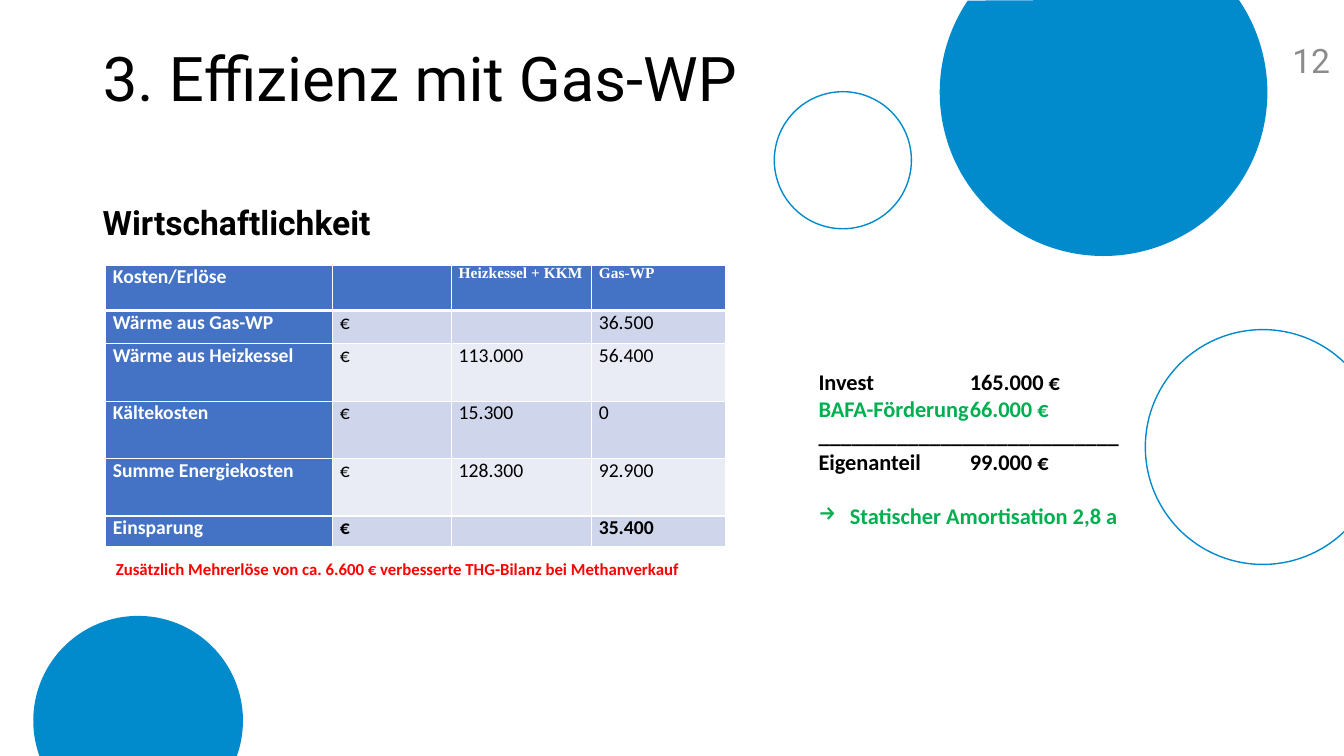
"""Build the slide on the economics of the gas heat pump."""
from dataclasses import dataclass

from lxml import etree
from pptx import Presentation
from pptx.dml.color import RGBColor
from pptx.enum.shapes import MSO_SHAPE
from pptx.enum.text import MSO_ANCHOR, PP_ALIGN
from pptx.oxml.ns import qn
from pptx.util import Inches, Pt

ELLIPSE = MSO_SHAPE.OVAL
CHORD = MSO_SHAPE.CHORD
TOP = MSO_ANCHOR.TOP
MIDDLE = MSO_ANCHOR.MIDDLE
LEFT = PP_ALIGN.LEFT
RIGHT = PP_ALIGN.RIGHT
TITLE_ONLY = 5


@dataclass(frozen=True)
class Theme:
    heading_font: str = "Roboto"
    body_font: str = "Calibri"
    column_font: str = "Times New Roman"
    circle: str = "018BCC"
    black: str = "000000"
    white: str = "FFFFFF"
    grey: str = "8C8C8C"
    red: str = "FF0000"
    green: str = "00B050"
    header: str = "4472C4"
    bands: tuple = ("CFD5EA", "E9EBF5")
    title_size: int = 44
    heading_size: int = 24
    result_size: int = 16
    cell_size: int = 14
    note_size: int = 12
    column_size: int = 11


THEME = Theme()

COLUMN_WIDTHS = (2.25, 1.18, 1.39, 1.33)
ROW_HEIGHTS = (0.45, 0.33, 0.57, 0.57, 0.57, 0.28)
COSTS = (
    ("Kosten/Erlöse", "", "Heizkessel + KKM", "Gas-WP"),
    ("Wärme aus Gas-WP", "€", "", "36.500"),
    ("Wärme aus Heizkessel", "€", "113.000", "56.400"),
    ("Kältekosten", "€", "15.300", "0"),
    ("Summe Energiekosten", "€", "128.300", "92.900"),
    ("Einsparung", "€", "", "35.400"),
)
RESULTS = (
    ("Invest\t\t165.000 €", THEME.black),
    ("BAFA-Förderung\t66.000 €", THEME.green),
    ("_" * 27, THEME.black),
    ("Eigenanteil\t99.000 €", THEME.black),
    ("Statischer Amortisation 2,8 a", THEME.green),
)
CIRCLES = (
    (0.33, 6.11, 2.08, True, (160.08, 19.82)),
    (7.68, 0.91, 1.36, False, None),
    (9.32, -0.71, 3.25, True, (325.38, 214.02)),
    (11.36, 3.27, 2.33, False, (45, 314.68)),
)


def style(run, font, size, color, bold=False):
    """Set the font, size, colour and weight of a run."""
    run.font.name = font
    run.font.size = Pt(size)
    run.font.bold = bold
    run.font.color.rgb = RGBColor.from_string(color)


def add_circle(slide, left, top, diameter, filled, angles):
    """Draw a circle, or a chord between two angles in degrees."""
    shape = slide.shapes.add_shape(
        CHORD if angles else ELLIPSE,
        Inches(left), Inches(top), Inches(diameter), Inches(diameter))
    shape.shadow.inherit = False
    for index, angle in enumerate(angles or ()):
        shape.adjustments[index] = angle * 0.6
    color = RGBColor.from_string(THEME.circle)
    if filled:
        shape.fill.solid()
        shape.fill.fore_color.rgb = color
        shape.line.fill.background()
    else:
        shape.fill.background()
        shape.line.color.rgb = color
        shape.line.width = Pt(1)


def add_title(slide, text):
    """Place and format the title placeholder."""
    title = slide.shapes.title
    title.left, title.top = Inches(0.92), Inches(0.4)
    title.width, title.height = Inches(11.5), Inches(1.45)
    frame = title.text_frame
    frame.text = text
    frame.vertical_anchor = TOP
    frame.margin_top = Inches(0.08)
    paragraph = frame.paragraphs[0]
    paragraph.alignment = LEFT
    paragraph.line_spacing = 0.9
    style(paragraph.runs[0], THEME.heading_font, THEME.title_size, THEME.black)


def add_text(slide, box, lines, font, size, bold=True, align=LEFT, anchor=TOP):
    """Add a text box of (text, colour) lines and return its paragraphs."""
    shape = slide.shapes.add_textbox(*(Inches(length) for length in box))
    frame = shape.text_frame
    frame.word_wrap = True
    frame.vertical_anchor = anchor
    frame.text = "\n".join(text for text, _ in lines)
    for paragraph, (_, color) in zip(frame.paragraphs, lines):
        paragraph.alignment = align
        style(paragraph.runs[0], font, size, color, bold)
    return frame.paragraphs


def add_bullet(paragraph, character, indent):
    """Give a paragraph a hanging bullet."""
    properties = paragraph._p.get_or_add_pPr()
    properties.set("marL", str(Inches(indent)))
    properties.set("indent", str(-Inches(indent)))
    etree.SubElement(properties, qn("a:buChar")).set("char", character)


def add_borders(cell, widths):
    """Draw white cell borders, given widths by side."""
    properties = cell._tc.get_or_add_tcPr()
    for side, width in widths.items():
        line = etree.SubElement(properties, qn(f"a:ln{side}"))
        line.set("w", str(Pt(width)))
        fill = etree.SubElement(line, qn("a:solidFill"))
        etree.SubElement(fill, qn("a:srgbClr")).set("val", THEME.white)


def format_cell(cell, text, row, column):
    """Write one table cell and style it by its place."""
    header = row == 0 or column == 0
    add_borders(cell, {"L": 1, "R": 1, "T": 3 if row == 1 else 1,
                       "B": 3 if row == 0 else 1})
    cell.fill.solid()
    color = THEME.header if header else THEME.bands[(row - 1) % 2]
    cell.fill.fore_color.rgb = RGBColor.from_string(color)
    cell.margin_left = cell.margin_right = Inches(0.07)
    cell.margin_top = cell.margin_bottom = 0
    run = cell.text_frame.paragraphs[0].add_run()
    run.text = text
    column_head = row == 0 and column > 0
    style(run,
          THEME.column_font if column_head else THEME.body_font,
          THEME.column_size if column_head else THEME.cell_size,
          THEME.white if header else THEME.black,
          header or row == len(COSTS) - 1)


def add_cost_table(slide):
    """Add the table that compares the energy costs."""
    table = slide.shapes.add_table(
        len(COSTS), len(COLUMN_WIDTHS), Inches(1.05), Inches(2.63),
        Inches(sum(COLUMN_WIDTHS)), Inches(sum(ROW_HEIGHTS))).table
    for column, width in zip(table.columns, COLUMN_WIDTHS):
        column.width = Inches(width)
    for row, height in zip(table.rows, ROW_HEIGHTS):
        row.height = Inches(height)
    for row, texts in enumerate(COSTS):
        for column, text in enumerate(texts):
            format_cell(table.cell(row, column), text, row, column)


def main():
    """Build and save the presentation."""
    presentation = Presentation()
    presentation.slide_width = Inches(13.33)
    presentation.slide_height = Inches(7.5)
    slide = presentation.slides.add_slide(presentation.slide_layouts[TITLE_ONLY])
    for circle in CIRCLES:
        add_circle(slide, *circle)
    add_title(slide, "3. Effizienz mit Gas-WP")
    add_text(slide, (0.92, 2, 6.5, 0.5), [("Wirtschaftlichkeit", THEME.black)],
             THEME.heading_font, THEME.heading_size)[0].line_spacing = 0.9
    add_text(slide, (12.42, 0.4, 0.87, 0.4), [("12", THEME.grey)],
             THEME.heading_font, THEME.heading_size, False, RIGHT, MIDDLE)
    add_cost_table(slide)
    note = ("Zusätzlich Mehrerlöse von ca. 6.600 € verbesserte THG-Bilanz "
            "bei Methanverkauf")
    add_text(slide, (1.05, 5.49, 6.09, 0.3), [(note, THEME.red)],
             THEME.body_font, THEME.note_size)
    results = add_text(slide, (8.02, 3.6, 5.3, 2.26), RESULTS,
                       THEME.body_font, THEME.result_size)
    results[-1].space_before = Pt(19.5)
    add_bullet(results[-1], "→", 0.31)
    presentation.save("out.pptx")


if __name__ == "__main__":
    main()
